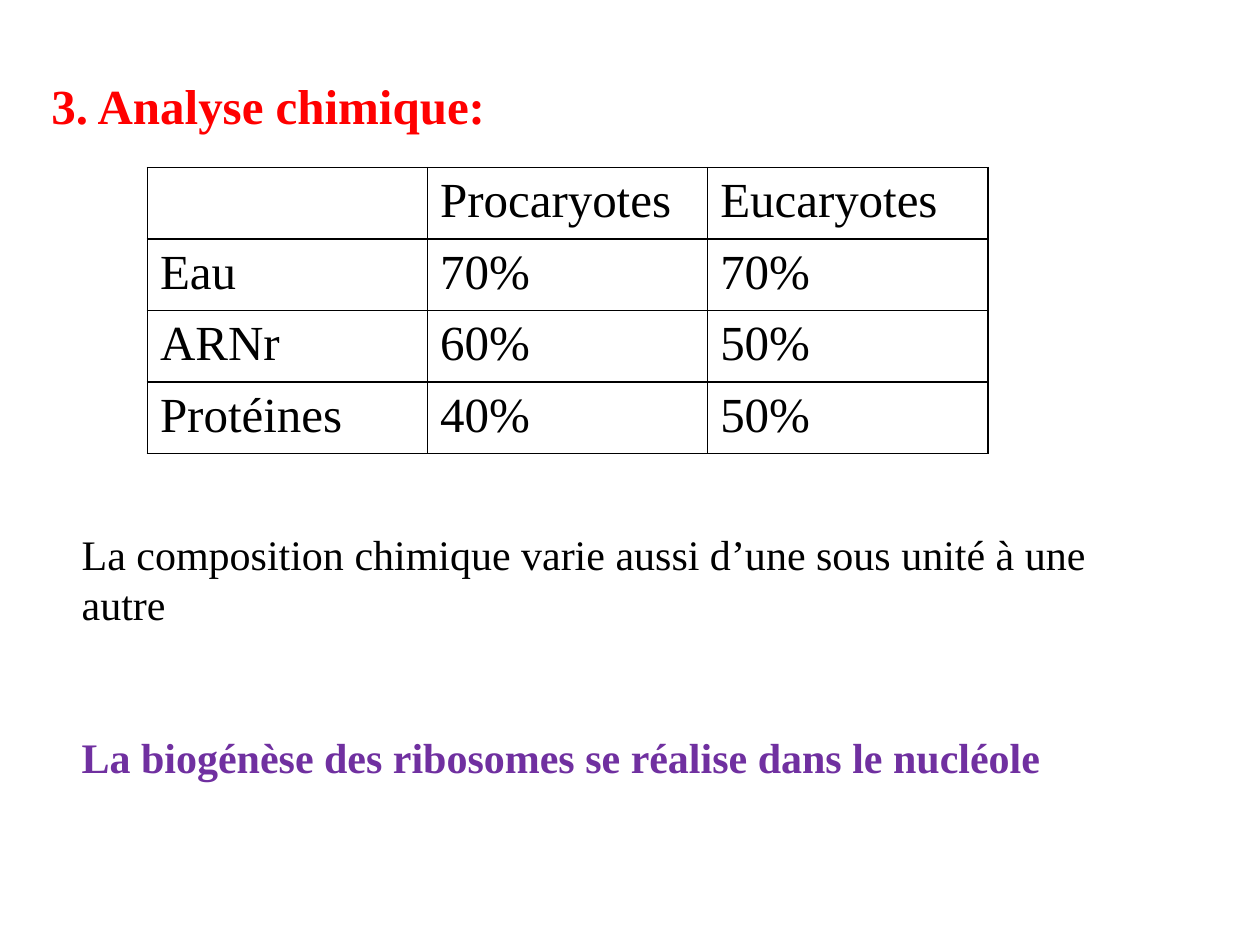
from lxml import etree
from pptx import Presentation
from pptx.dml.color import RGBColor
from pptx.oxml.ns import qn
from pptx.util import Inches, Pt

FONT = "Times New Roman"
BLACK = RGBColor(0x00, 0x00, 0x00)
RED = RGBColor(0xFF, 0x00, 0x00)
PURPLE = RGBColor(0x70, 0x30, 0xA0)

TITLE = "3. Analyse chimique:"
COMPOSITION = [
    ("", "Procaryotes", "Eucaryotes"),
    ("Eau", "70%", "70%"),
    ("ARNr", "60%", "50%"),
    ("Protéines", "40%", "50%"),
]
REMARKS = [
    ("La composition chimique varie aussi d’une sous unité à une autre", BLACK, False),
    ("La biogénèse des ribosomes se réalise dans le nucléole", PURPLE, True),
]
TABLE_WIDTH, TABLE_HEIGHT = 6.67, 2.27
REMARK_LINE = 29


def add_run(paragraph, text, size, color, bold=False):
    run = paragraph.add_run()
    run.text = text
    run.font.name = FONT
    run.font.size = Pt(size)
    run.font.bold = bold
    run.font.color.rgb = color


def add_text_frame(slide, left, top, width, height):
    box = slide.shapes.add_textbox(Inches(left), Inches(top), Inches(width), Inches(height))
    box.text_frame.word_wrap = True
    return box.text_frame


def add_borders(cell):
    """Give all four sides of a cell a thin black line, ahead of its fill."""
    properties = cell._tc.get_or_add_tcPr()
    for position, side in enumerate(("a:lnL", "a:lnR", "a:lnT", "a:lnB")):
        line = etree.Element(qn(side), w=str(Pt(1)))
        fill = etree.SubElement(line, qn("a:solidFill"))
        etree.SubElement(fill, qn("a:srgbClr"), val=str(BLACK))
        properties.insert(position, line)


def add_composition_table(slide):
    row_count, column_count = len(COMPOSITION), len(COMPOSITION[0])
    table = slide.shapes.add_table(
        row_count, column_count, Inches(1.17), Inches(1.33),
        Inches(TABLE_WIDTH), Inches(TABLE_HEIGHT)).table
    table.first_row = False
    table.horz_banding = False
    for row_index, row in enumerate(COMPOSITION):
        for column_index, text in enumerate(row):
            cell = table.cell(row_index, column_index)
            cell.fill.background()
            add_borders(cell)
            paragraph = cell.text_frame.paragraphs[0]
            if text:
                add_run(paragraph, text, 28, BLACK)


def main():
    presentation = Presentation()
    presentation.slide_width = Inches(10)
    presentation.slide_height = Inches(7.5)
    slide = presentation.slides.add_slide(presentation.slide_layouts[6])

    title = add_text_frame(slide, 0.31, 0.55, 9.38, 1.85)
    add_run(title.paragraphs[0], TITLE, 28, RED, bold=True)

    add_composition_table(slide)

    remarks = add_text_frame(slide, 0.55, 4.14, 8.67, 2.12)
    for index, (text, color, bold) in enumerate(REMARKS):
        paragraph = remarks.add_paragraph() if index else remarks.paragraphs[0]
        paragraph.line_spacing = Pt(REMARK_LINE)
        paragraph.space_before = Pt(2 * REMARK_LINE if index else 0)
        add_run(paragraph, text, 24, color, bold)

    presentation.save("out.pptx")


if __name__ == "__main__":
    main()
